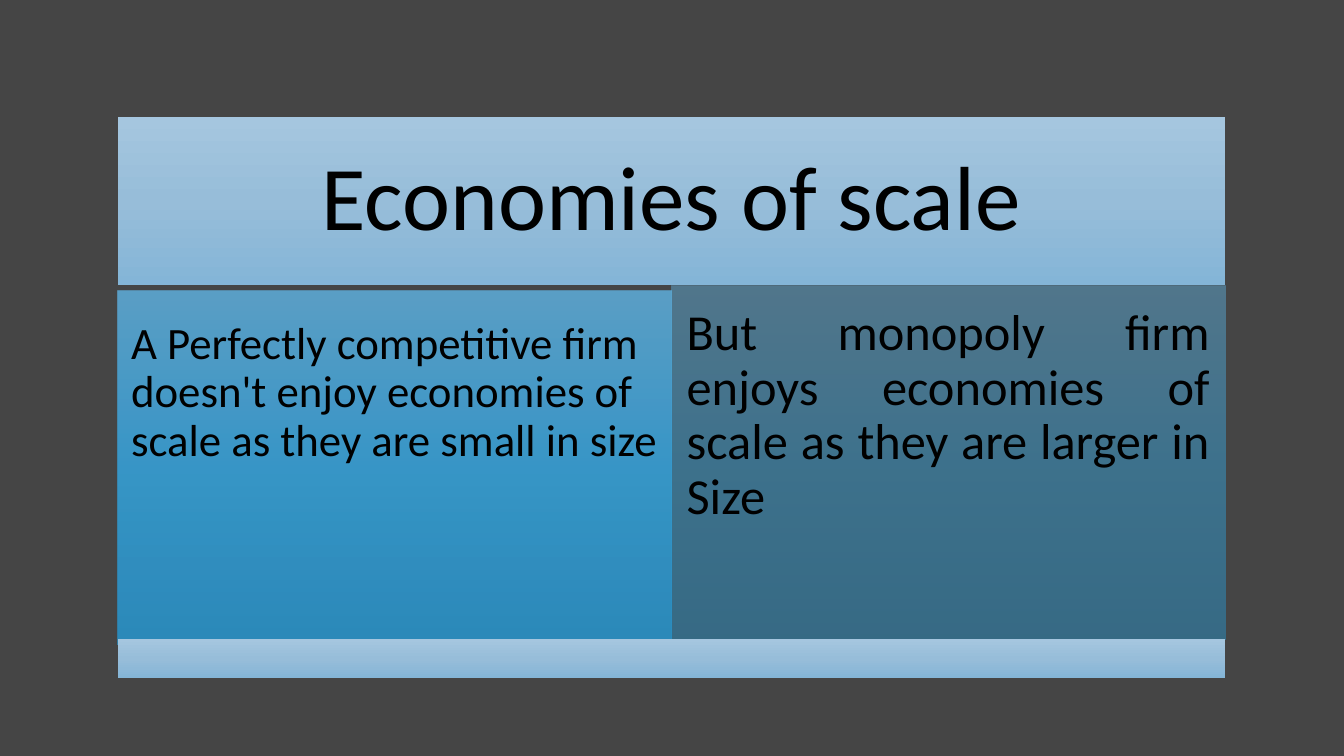
from lxml.etree import SubElement
from pptx import Presentation
from pptx.dml.color import RGBColor
from pptx.enum.shapes import MSO_SHAPE
from pptx.enum.text import MSO_ANCHOR, MSO_AUTO_SIZE, PP_ALIGN
from pptx.oxml.ns import qn
from pptx.util import Inches, Pt

COLOURS = {"background": "454545", "text": "000000"}
GRADIENTS = {
    "pale": ("A5C6DF", "97BDD9", "84B5D7"),
    "strong": ("5DA7D2", "369ED3", "288FC4"),
}
FONT = "Calibri"


def write_text(shape, text, size, align=PP_ALIGN.LEFT, anchor=MSO_ANCHOR.TOP,
               inset=0.0, top=0.0):
    """Fill a shape with one paragraph; inset and top are in inches."""
    frame = shape.text_frame
    frame.word_wrap = True
    frame.auto_size = MSO_AUTO_SIZE.NONE
    frame.vertical_anchor = anchor
    frame.margin_left = frame.margin_right = frame.margin_bottom = Inches(inset)
    frame.margin_top = Inches(top or inset)
    para = frame.paragraphs[0]
    para.alignment = align
    para.line_spacing = 0.9
    span = para.add_run()
    span.text = text
    span.font.name = FONT
    span.font.size = Pt(size)
    span.font.color.rgb = RGBColor.from_string(COLOURS["text"])


class SlideBuilder:
    def __init__(self, page):
        self.page = page
        fill = page.background.fill
        fill.solid()
        fill.fore_color.rgb = RGBColor.from_string(COLOURS["background"])

    def shade(self, shape, gradient, opacity=100):
        """Apply an even top-to-bottom gradient."""
        shape.fill.gradient()
        shape.fill.gradient_angle = 270
        stops = shape._element.spPr.find(qn("a:gradFill")).find(qn("a:gsLst"))
        for stop in list(stops):
            stops.remove(stop)
        for index, colour in enumerate(GRADIENTS[gradient]):
            stop = SubElement(stops, qn("a:gs"), pos=str(index * 50000))
            value = SubElement(stop, qn("a:srgbClr"), val=colour)
            if opacity < 100:
                SubElement(value, qn("a:alpha"), val=str(opacity * 1000))

    def title(self, text, left, top, width, height, gradient, **text_format):
        box = self.page.shapes.title
        box.left, box.top = Inches(left), Inches(top)
        box.width, box.height = Inches(width), Inches(height)
        self.shade(box, gradient)
        write_text(box, text, **text_format)

    def panel(self, left, top, width, height, gradient, opacity=100):
        box = self.page.shapes.add_shape(
            MSO_SHAPE.RECTANGLE, Inches(left), Inches(top), Inches(width), Inches(height))
        box.shadow.inherit = False
        box.line.fill.background()
        self.shade(box, gradient, opacity)
        return box


def main():
    deck = Presentation()
    deck.slide_width, deck.slide_height = Inches(13.33), Inches(7.5)
    builder = SlideBuilder(deck.slides.add_slide(deck.slide_layouts[5]))

    left, width = 1.17, 10.98
    half = width / 2
    panel_height = 3.51

    # Heading band
    builder.title("Economies of scale", left, 1.16, width, 1.67, "pale", size=65,
                  align=PP_ALIGN.CENTER, anchor=MSO_ANCHOR.MIDDLE, inset=0.27)

    # Two market forms side by side
    competition = builder.panel(left, 2.88, half, panel_height, "strong", opacity=90)
    write_text(competition, "A Perfectly competitive firm doesn't enjoy economies of "
               "scale as they are small in size", size=32, inset=0.13, top=0.3)
    monopoly = builder.panel(left + half, 2.83, half, panel_height, "strong", opacity=50)
    write_text(monopoly, "But monopoly firm enjoys economies of scale as they are "
               "larger in Size", size=36, align=PP_ALIGN.JUSTIFY, inset=0.15, top=0.22)

    # Base band
    builder.panel(left, 6.34, width, 0.39, "pale")

    deck.save("out.pptx")


if __name__ == "__main__":
    main()
